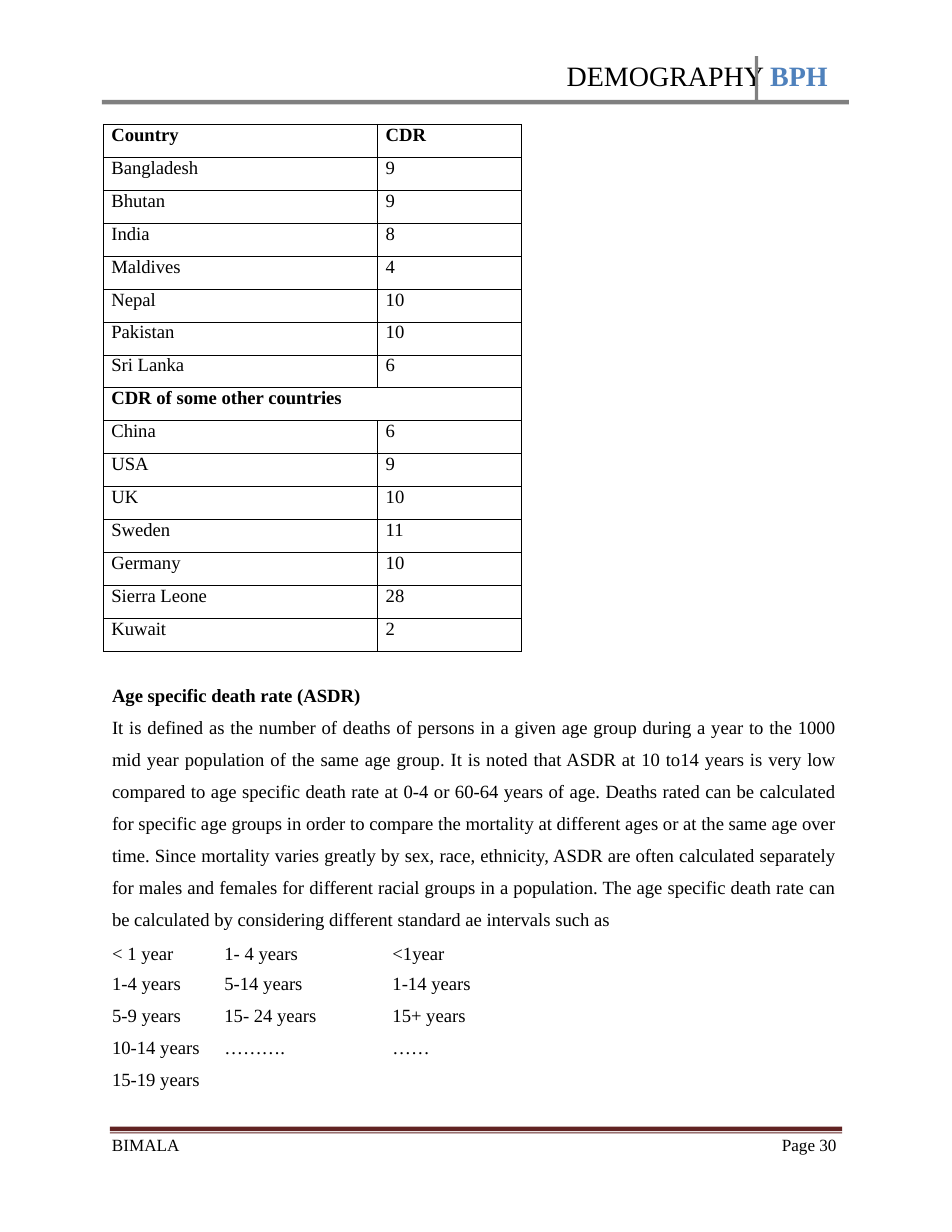
"""Build a demography handout page with death rate tables and a definition."""

from dataclasses import dataclass

from lxml.etree import SubElement
from pptx import Presentation
from pptx.dml.color import RGBColor
from pptx.enum.text import MSO_ANCHOR as Anchor, MSO_AUTO_SIZE as AutoSize, PP_ALIGN as Align
from pptx.oxml.ns import qn
from pptx.util import Pt

COLORS = {"text": "000000", "accent": "4F81BC", "header": "808080", "footer": "612322"}
FONT = "Times New Roman"


@dataclass
class Run:
    text: str
    size: float = 12
    bold: bool = False
    color: str = "text"


@dataclass
class TextBlock:
    box: tuple[float, float, float, float]
    paragraphs: list[list[Run]]
    format: dict
    wrap: bool = True


@dataclass
class Grid:
    box: tuple[float, float, float, float]
    columns: list[float]
    heights: list[float]
    rows: list[list[str]]
    indents: list[float]
    bold_rows: tuple[int, ...] = ()
    border: float = 0


@dataclass
class Rule:
    color: str
    contours: list[list[tuple[float, float]]]


HEADER = TextBlock(
    (364.3, 37.4, 181.5, 23),
    [[Run("DEMOGRAPHY ", 18), Run("BPH", 18, True, "accent")]],
    {"space_before": Pt(1), "alignment": Align.LEFT, "line_spacing": 1.0},
)
FOOTER_FORMAT = {"line_spacing": Pt(11.8)}
TEXT_BLOCKS = [
    TextBlock((72, 730.8, 200, 13), [[Run("BIMALA", 11)]], FOOTER_FORMAT),
    TextBlock((502.6, 730.8, 41, 13), [[Run("Page 30", 11)]], FOOTER_FORMAT, False),
    TextBlock(
        (72, 433.4, 466, 167),
        [
            [Run("Age specific death rate (ASDR)", bold=True)],
            [Run(
                "It is defined as the number of deaths of persons in a given age group during a "
                "year to the 1000 mid year population of the same age group. It is noted that ASDR "
                "at 10 to14 years is very low compared to age specific death rate at 0-4 or 60-64 "
                "years of age. Deaths rated can be calculated for specific age groups in order to "
                "compare the mortality at different ages or at the same age over time. Since "
                "mortality varies greatly by sex, race, ethnicity, ASDR are often calculated "
                "separately for males and females for different racial groups in a population. "
                "The age specific death rate can be calculated by considering different standard "
                "ae intervals such as"
            )],
        ],
        {"alignment": Align.JUSTIFY, "line_spacing": Pt(20.57)},
    ),
]
RULES = [
    Rule("header", [
        [(65.5, 64.2), (485.3, 64.2), (485.3, 67.1), (65.5, 67.1)],
        [(485.3, 36), (487.4, 36), (487.4, 64.2), (545.8, 64.2), (545.8, 67.1), (485.3, 67.1)],
    ]),
    Rule("footer", [
        [(70.6, top), (541.4, top), (541.4, bottom), (70.6, bottom)]
        for top, bottom in ((724.3, 727.2), (727.9, 728.6))
    ]),
]
RATES = [
    ["Country", "CDR"], ["Bangladesh", "9"], ["Bhutan", "9"], ["India", "8"],
    ["Maldives", "4"], ["Nepal", "10"], ["Pakistan", "10"], ["Sri Lanka", "6"],
    ["CDR of some other countries"], ["China", "6"], ["USA", "9"], ["UK", "10"],
    ["Sweden", "11"], ["Germany", "10"], ["Sierra Leone", "28"], ["Kuwait", "2"],
]
INTERVALS = [
    ["< 1 year", "1- 4 years", "<1year"],
    ["1-4 years", "5-14 years", "1-14 years"],
    ["5-9 years", "15- 24 years", "15+ years"],
    ["10-14 years", "……….", "……"],
    ["15-19 years", "", ""],
]
GRIDS = [
    Grid((66.4, 79.9, 268.6, 339.2), [176.4, 92.2], [21.2] * 16, RATES, [5.2, 5.2], (0, 8), 0.5),
    Grid((69.8, 606.2, 235, 95.8), [66.5, 91.5, 77], [17.3, 20.7, 20.7, 20.7, 17.3], INTERVALS,
         [2.3, 8, 24.6]),
]


def apply(target, values: dict) -> None:
    for name, value in values.items():
        setattr(target, name, value)


def write_runs(paragraph, runs: list[Run]) -> None:
    for item in runs:
        run = paragraph.add_run()
        run.text = item.text
        apply(run.font, {"name": FONT, "size": Pt(item.size), "bold": item.bold})
        run.font.color.rgb = RGBColor.from_string(COLORS[item.color])


def fill_text(shape, block: TextBlock) -> None:
    apply(shape, dict(zip(("left", "top", "width", "height"), map(Pt, block.box))))
    frame = shape.text_frame
    apply(frame, {
        "margin_left": 0, "margin_top": 0, "margin_right": 0, "margin_bottom": 0,
        "word_wrap": block.wrap, "auto_size": AutoSize.NONE, "vertical_anchor": Anchor.TOP,
    })
    for index, runs in enumerate(block.paragraphs):
        paragraph = frame.add_paragraph() if index else frame.paragraphs[0]
        apply(paragraph, block.format)
        write_runs(paragraph, runs)


def draw_rule(slide, rule: Rule) -> None:
    contours = [[(Pt(x), Pt(y)) for x, y in contour] for contour in rule.contours]
    builder = slide.shapes.build_freeform(*contours[0][0], scale=1.0)
    for index, (start, *rest) in enumerate(contours):
        if index:
            builder.move_to(*start)
        builder.add_line_segments(rest, close=True)
    shape = builder.convert_to_shape()
    shape.shadow.inherit = False
    shape.fill.solid()
    shape.fill.fore_color.rgb = RGBColor.from_string(COLORS[rule.color])
    shape.line.fill.background()


def draw_borders(cell, width: float) -> None:
    properties = cell._tc.get_or_add_tcPr()
    for side in ("lnL", "lnR", "lnT", "lnB"):
        line = SubElement(properties, qn(f"a:{side}"), w=str(Pt(width)))
        fill = SubElement(line, qn("a:solidFill"))
        SubElement(fill, qn("a:srgbClr"), val=COLORS["text"])


def draw_grid(slide, grid: Grid) -> None:
    table = slide.shapes.add_table(
        len(grid.rows), len(grid.columns), *map(Pt, grid.box)
    ).table
    apply(table, {"first_row": False, "horz_banding": False})
    for column, width in zip(table.columns, grid.columns):
        column.width = Pt(width)
    for row_index, (texts, height) in enumerate(zip(grid.rows, grid.heights)):
        table.rows[row_index].height = Pt(height)
        padded = not grid.border and row_index > 0
        for column_index, indent in enumerate(grid.indents):
            cell = table.cell(row_index, column_index)
            apply(cell, {
                "margin_left": Pt(indent), "margin_top": Pt(2.2 if padded else 0),
                "margin_right": 0, "margin_bottom": 0, "vertical_anchor": Anchor.TOP,
            })
            if grid.border:
                draw_borders(cell, grid.border)
            cell.fill.background()
            paragraph = cell.text_frame.paragraphs[0]
            apply(paragraph, {
                "line_spacing": Pt(13.6), "space_before": Pt(2.4 if padded else 0),
            })
            if column_index < len(texts) and texts[column_index]:
                write_runs(paragraph, [Run(texts[column_index], bold=row_index in grid.bold_rows)])
            else:
                SubElement(paragraph._p, qn("a:endParaRPr"), sz="1200")
        if len(texts) == 1:
            table.cell(row_index, 0).merge(table.cell(row_index, len(grid.columns) - 1))


def main() -> None:
    presentation = Presentation()
    apply(presentation, {"slide_width": Pt(612), "slide_height": Pt(792)})
    slide = presentation.slides.add_slide(presentation.slide_layouts[5])
    fill_text(slide.shapes.title, HEADER)
    for rule in RULES:
        draw_rule(slide, rule)
    for grid in GRIDS:
        draw_grid(slide, grid)
    for block in TEXT_BLOCKS:
        fill_text(slide.shapes.add_textbox(0, 0, 0, 0), block)
    presentation.save("out.pptx")


if __name__ == "__main__":
    main()
